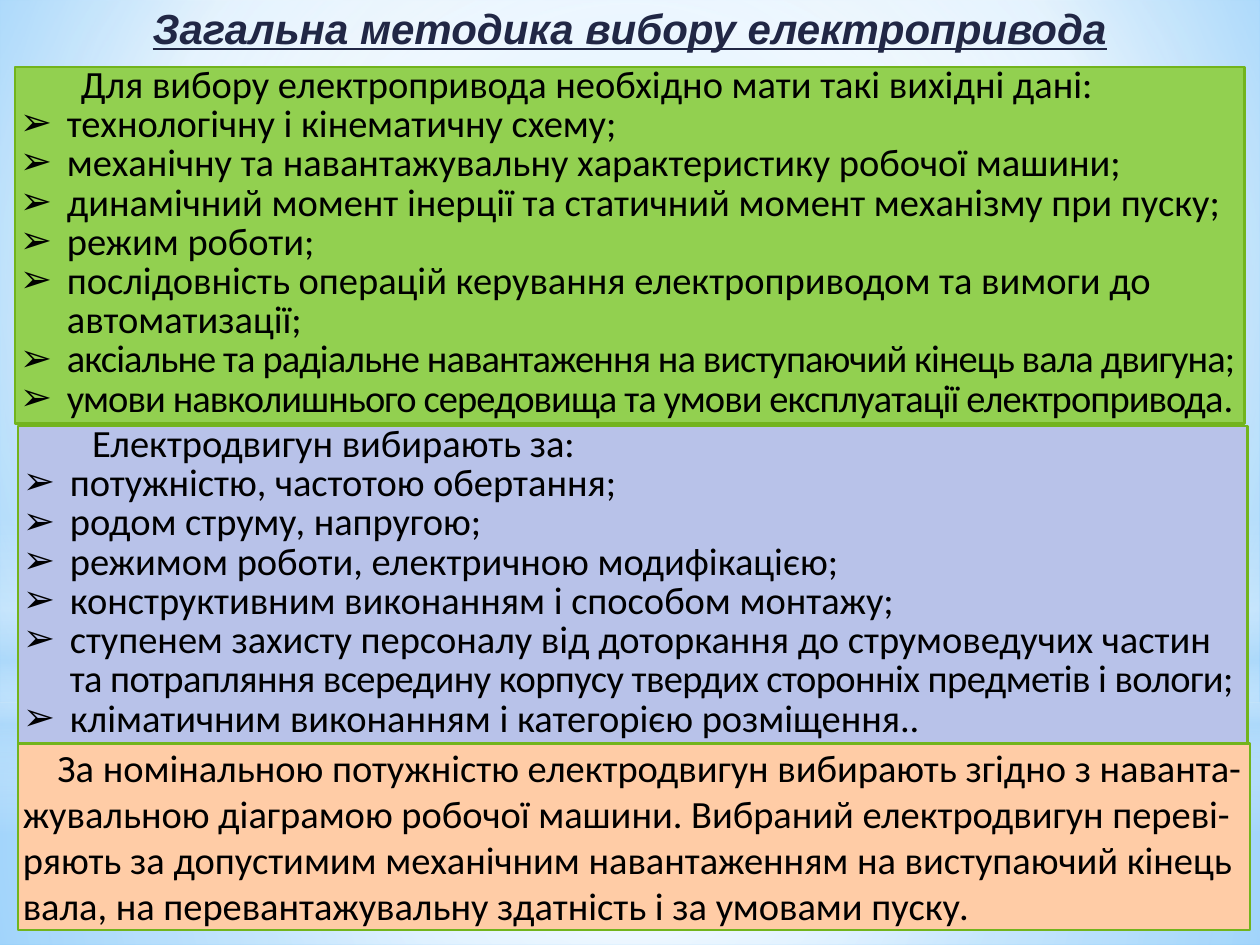
from lxml import etree
from pptx import Presentation
from pptx.dml.color import RGBColor
from pptx.enum.shapes import MSO_SHAPE
from pptx.enum.text import MSO_ANCHOR, MSO_AUTO_SIZE, PP_ALIGN
from pptx.oxml.ns import qn
from pptx.util import Cm, Pt

RECT, OVAL = MSO_SHAPE.RECTANGLE, MSO_SHAPE.OVAL
TOP, GROW = MSO_ANCHOR.TOP, MSO_AUTO_SIZE.SHAPE_TO_FIT_TEXT
LEFT, CENTER = PP_ALIGN.LEFT, PP_ALIGN.CENTER

# Content: a paragraph is a list of (text, letter spacing in points) runs
TITLE = "Загальна методика вибору електропривода"
INPUT_DATA = [
    [("технологічну і кінематичну схему;", 0)],
    [("механічну та навантажувальну характеристику робочої машини;", 0)],
    [("динамічний момент інерції та статичний момент механізму при пуску;", 0)],
    [("режим роботи;", 0)],
    [("послідовність операцій керування електроприводом та вимоги до автоматизації;", 0)],
    [("аксіальне та радіальне навантаження на виступаючий кінець вала двигуна;", -0.5)],
    [("умови навколишнього середовища та умови експлуатації електропривода", -0.5), (".", 0)],
]
CRITERIA = [
    [("потужністю, частотою обертання;", 0)],
    [("родом струму, напругою;", 0)],
    [("режимом роботи, електричною модифікацією;", 0)],
    [("конструктивним виконанням і способом монтажу;", 0)],
    [("ступенем захисту персоналу від доторкання до струмоведучих частин ", 0),
     ("та потрапляння всередину корпусу твердих сторонніх предметів і вологи;", -0.3)],
    [("кліматичним виконанням і категорією розміщення..", 0)],
]
SELECTION = (
    "За номінальною потужністю електродвигун вибирають згідно з наванта-жувальною "
    "діаграмою робочої машини. Вибраний електродвигун переві-ряють за допустимим "
    "механічним навантаженням на виступаючий кінець вала, на перевантажувальну "
    "здатність і за умовами пуску."
)
# Panels: place in cm, fill, line spacing, lead text, its indent in cm, bullets
PANELS = [
    ((0.3, 1.35, 24.79, 7.19), "92D050", 0.85,
     "Для вибору електропривода необхідно мати такі вихідні дані:", 1.23, INPUT_DATA),
    ((0.36, 8.59, 24.79, 6.4), "B8C2E9", 0.85,
     "Електродвигун вибирають за:", 1.4, CRITERIA),
    ((0.36, 14.99, 24.84, 3.76), "FFCCA6", 1.0, SELECTION, 0.7, []),
]
# Backdrop: stops are (position %, colour, opacity %); focus None means top to bottom
MIDDLE = (50, 50, 50, 50)
SKY = [(0, "9ED5FF", 100), (60, "FFFFFF", 100), (100, "5BB9FF", 100)]
GLOWS = [
    (RECT, (0, 14.17, 25.4, 4.88), MIDDLE,
     [(0, "FFFFFF", 91), (37, "FFFFFF", 76), (100, "B4DCFA", 79)]),
    (RECT, (0, 0, 25.4, 14.17), MIDDLE,
     [(0, "FFFFFF", 89), (48, "FFFFFF", 62), (100, "B4DCFA", 79)]),
    (RECT, (0, 10.46, 25.4, 6.35), None,
     [(0, "FFFFFF", 0), (29, "FFFFFF", 30), (45, "B4DCFA", 40),
      (55, "FFFFFF", 26), (65, "B4DCFA", 60), (100, "FFFFFF", 0)]),
    (OVAL, (0, 4.45, 25.4, 14.17), MIDDLE,
     [(0, "FFFFFF", 100), (56, "FFFFFF", 0)]),
]


def color(code):
    return RGBColor.from_string(code)


def set_gradient(holder, stops, focus):
    """Swap the solid fill in holder for a gradient."""
    gradient = etree.Element(qn("a:gradFill"), rotWithShape="1")
    stop_list = etree.SubElement(gradient, qn("a:gsLst"))
    for position, code, opacity in stops:
        stop = etree.SubElement(stop_list, qn("a:gs"), pos=str(position * 1000))
        tint = etree.SubElement(stop, qn("a:srgbClr"), val=code)
        etree.SubElement(tint, qn("a:alpha"), val=str(opacity * 1000))
    if focus is None:
        etree.SubElement(gradient, qn("a:lin"), ang="5400000", scaled="0")
    else:
        circle = etree.SubElement(gradient, qn("a:path"), path="circle")
        sides = {side: str(share * 1000) for side, share in zip("ltrb", focus)}
        etree.SubElement(circle, qn("a:fillToRect"), sides)
    holder.replace(holder.find(qn("a:solidFill")), gradient)


def add_box(page, kind, place):
    box = page.shapes.add_shape(kind, *map(Cm, place))
    box.shadow.inherit = False
    box.fill.solid()
    return box


def set_frame(box, inset):
    frame = box.text_frame
    frame.word_wrap = True
    frame.auto_size = GROW
    frame.vertical_anchor = TOP
    frame.margin_left = frame.margin_right = Cm(inset)
    frame.margin_top = frame.margin_bottom = 0
    return frame


def add_span(para, text, font, size, code, spacing=0):
    span = para.add_run()
    span.text = text
    span.font.name, span.font.size = font, Pt(size)
    span.font.color.rgb = color(code)
    if spacing:
        span.font._element.set("spc", str(round(spacing * 100)))
    return span


def set_indent(para, margin, first, bullet=None):
    props = para._p.get_or_add_pPr()
    props.set("marL", str(Cm(margin)))
    props.set("indent", str(Cm(first)))
    if bullet:
        etree.SubElement(props, qn("a:buFont"), typeface="Arial")
        etree.SubElement(props, qn("a:buChar"), char=bullet)


def add_panel(page, place, fill, line_spacing, lead, lead_indent, bullets):
    box = add_box(page, RECT, place)
    box.fill.fore_color.rgb = color(fill)
    box.line.color.rgb = color("72B41D")
    box.line.width = Pt(1.25)
    frame = set_frame(box, 0.1)
    for index, runs in enumerate([[(lead, 0)]] + bullets):
        para = frame.add_paragraph() if index else frame.paragraphs[0]
        para.alignment = LEFT
        para.line_spacing = line_spacing
        if index:
            set_indent(para, 0.95, -0.95, "➢")
        else:
            set_indent(para, 0, lead_indent)
        for text, spacing in runs:
            add_span(para, text, "Calibri", 22, "000000", spacing)


deck = Presentation()
deck.slide_width, deck.slide_height = Cm(25.4), Cm(19.05)
page = deck.slides.add_slide(deck.slide_layouts[6])

# Backdrop
page.background.fill.solid()
set_gradient(page._element.find(".//" + qn("p:bgPr")), SKY, (20, 10, 20, 60))
for kind, place, focus, stops in GLOWS:
    glow = add_box(page, kind, place)
    glow.line.fill.background()
    set_gradient(glow._element.spPr, stops, focus)

# Title
title = page.shapes.add_textbox(Cm(0.3), Cm(0.2), Cm(24.79), Cm(0.86))
para = set_frame(title, 0).paragraphs[0]
para.alignment = CENTER
para.line_spacing = 0.85
heading = add_span(para, TITLE, "Arial", 24, "212745").font
heading.bold = heading.italic = heading.underline = True

# Panels
for panel in PANELS:
    add_panel(page, *panel)

deck.save("out.pptx")
